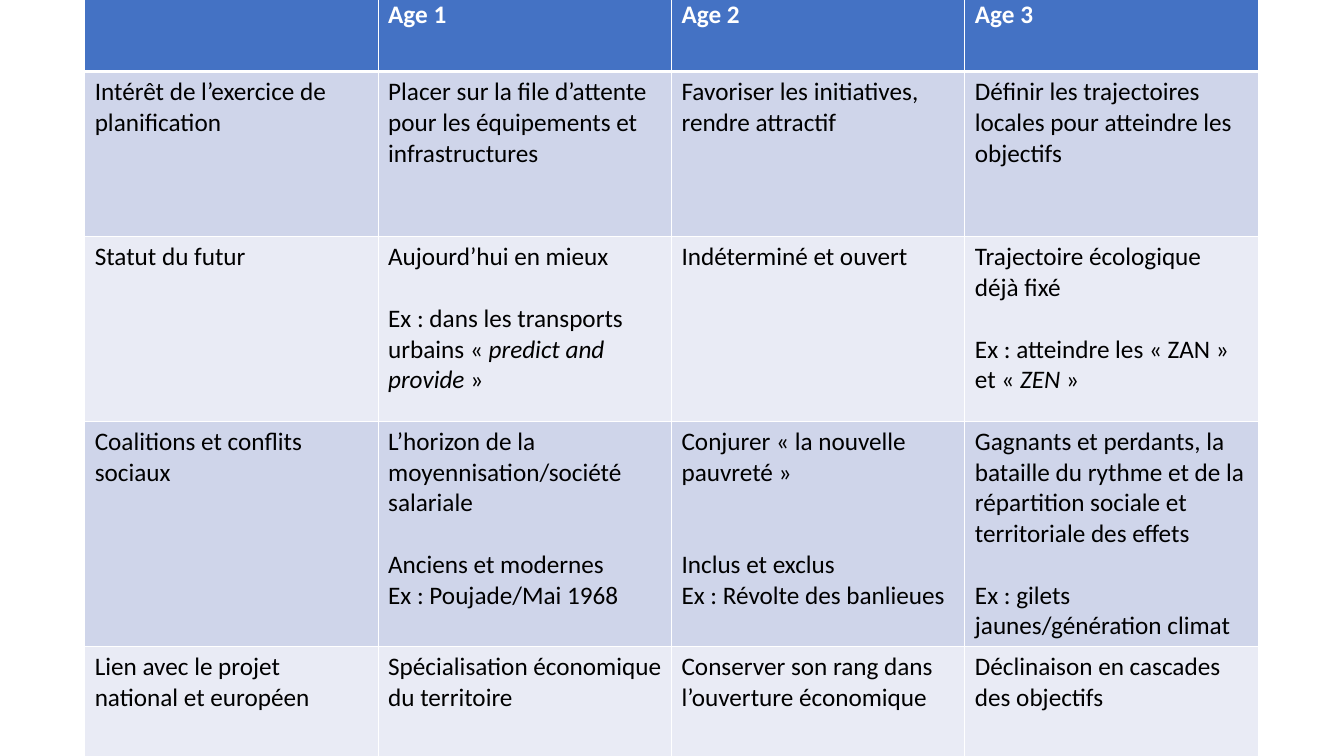
from pptx import Presentation
from pptx.dml.color import RGBColor
from pptx.oxml import parse_xml
from pptx.oxml.ns import nsdecls
from pptx.util import Inches, Pt

WHITE = RGBColor(0xFF, 0xFF, 0xFF)
BLACK = RGBColor(0x00, 0x00, 0x00)
BLUE = RGBColor(0x44, 0x72, 0xC4)
BAND_DARK = RGBColor(0xCF, 0xD5, 0xEA)
BAND_LIGHT = RGBColor(0xE9, 0xEB, 0xF5)

FONT, SIZE = "Calibri", 18
LINE_HEIGHT = Pt(22)
LEFT, TOP, COL_WIDTH = 0.84, -0.06, 2.91
ROW_HEIGHTS = [0.77, 1.64, 1.83, 2.12, 1.26]

# Asterisks enclose italics; an empty line stands for a gap of one line
AGES = [
    ["", "Age 1", "Age 2", "Age 3"],
    ["Intérêt de l’exercice de planification",
     "Placer sur la file d’attente pour les équipements et infrastructures",
     "Favoriser les initiatives, rendre attractif",
     "Définir les trajectoires locales pour atteindre les objectifs"],
    ["Statut du futur",
     "Aujourd’hui en mieux\n\nEx : dans les transports urbains « *predict and provide *»",
     "Indéterminé et ouvert",
     "Trajectoire écologique déjà fixé\n\nEx : atteindre les « ZAN » et « *ZEN* »"],
    ["Coalitions et conflits sociaux",
     "L’horizon de la moyennisation/société salariale\n\n"
     "Anciens et modernes\nEx : Poujade/Mai 1968",
     "Conjurer « la nouvelle pauvreté »\n\n\n"
     "Inclus et exclus\nEx : Révolte des banlieues",
     "Gagnants et perdants, la bataille du rythme et de la répartition sociale "
     "et territoriale des effets\n\nEx : gilets jaunes/génération climat"],
    ["Lien avec le projet national et européen",
     "Spécialisation économique du territoire",
     "Conserver son rang dans l’ouverture économique",
     "Déclinaison en cascades des objectifs"],
]


def add_runs(p, line, color, bold):
    """Write a line, switching italics at each asterisk."""
    for i, part in enumerate(line.split("*")):
        if part:
            r = p.add_run()
            r.text = part
            r.font.name, r.font.size = FONT, Pt(SIZE)
            r.font.bold, r.font.italic = bold, i % 2 == 1
            r.font.color.rgb = color


def write_cell(cell, text, color, bold):
    """Turn lines into paragraphs and empty lines into space before."""
    tf = cell.text_frame
    p, gap = tf.paragraphs[0], 0
    for i, line in enumerate(text.split("\n")):
        if i and not line:
            gap += 1
            continue
        if i:
            p = tf.add_paragraph()
        if gap:
            p.space_before = gap * LINE_HEIGHT
        add_runs(p, line, color, bold)
        gap = 0


def set_borders(cell, top, bottom):
    """Draw white borders; widths are in points."""
    tc_pr = cell._tc.get_or_add_tcPr()
    sides = {"L": 1, "R": 1, "T": top, "B": bottom}
    for i, (side, width) in enumerate(sides.items()):
        tc_pr.insert(i, parse_xml(
            f'<a:ln{side} {nsdecls("a")} w="{Pt(width)}"><a:solidFill>'
            f'<a:srgbClr val="{WHITE}"/></a:solidFill></a:ln{side}>'))


def add_ages_table(s):
    rows, cols = len(AGES), len(AGES[0])
    table = s.shapes.add_table(
        rows, cols, Inches(LEFT), Inches(TOP),
        Inches(COL_WIDTH * cols), Inches(sum(ROW_HEIGHTS))).table
    for column in table.columns:
        column.width = Inches(COL_WIDTH)
    for i, (row, height) in enumerate(zip(table.rows, ROW_HEIGHTS)):
        row.height = Inches(height)
        header = i == 0
        fill = BLUE if header else (BAND_LIGHT, BAND_DARK)[i % 2]
        for cell, text in zip(row.cells, AGES[i]):
            cell.fill.solid()
            cell.fill.fore_color.rgb = fill
            set_borders(cell, top=3 if i == 1 else 1, bottom=3 if header else 1)
            write_cell(cell, text, WHITE if header else BLACK, header)


def main():
    prs = Presentation()
    prs.slide_width, prs.slide_height = Inches(13.33), Inches(7.5)
    s = prs.slides.add_slide(prs.slide_layouts[6])  # blank: the slide has no title
    add_ages_table(s)
    prs.save("out.pptx")


if __name__ == "__main__":
    main()
